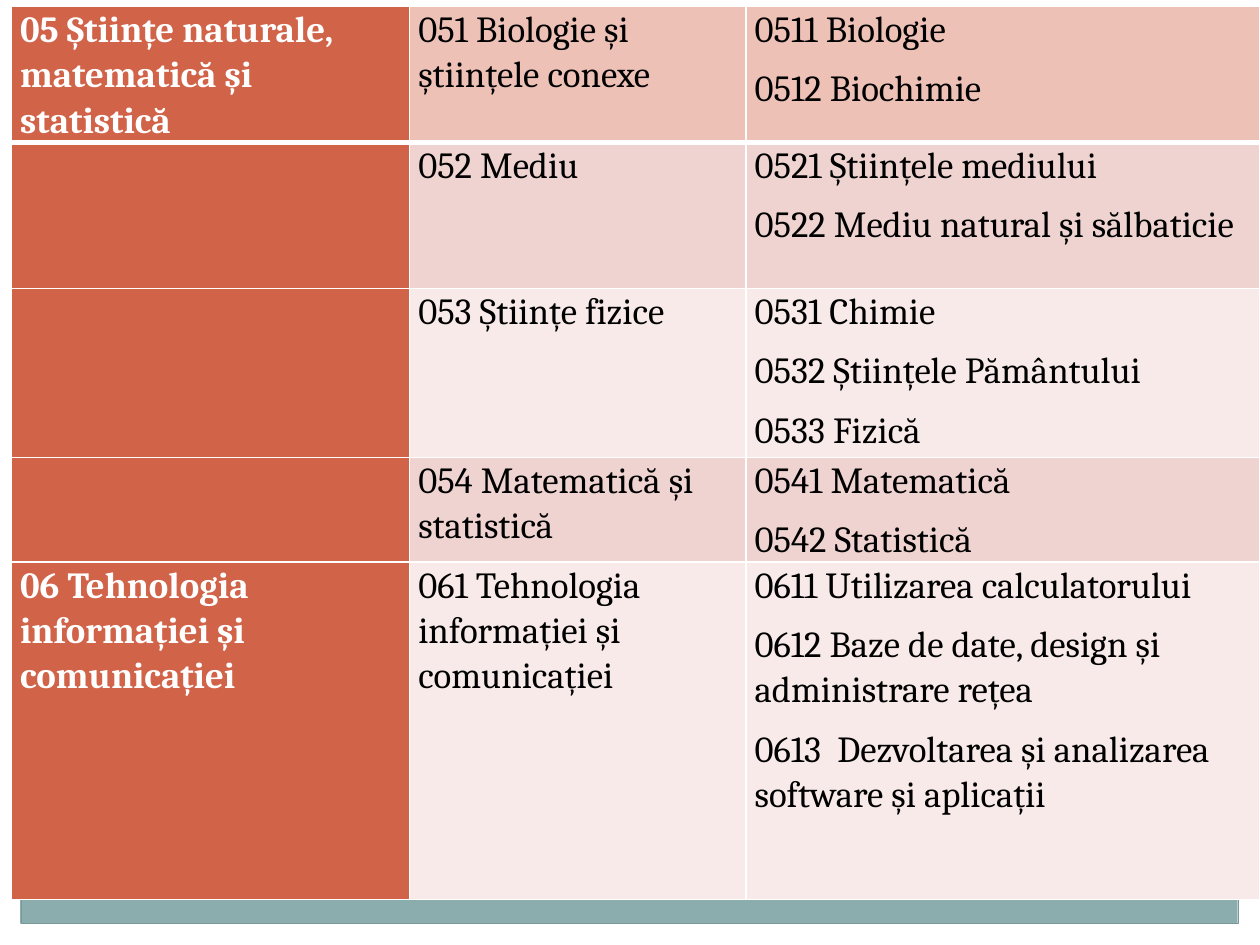
from lxml.etree import SubElement
from pptx import Presentation
from pptx.dml.color import RGBColor
from pptx.enum.shapes import MSO_SHAPE
from pptx.oxml.ns import qn
from pptx.util import Inches, Pt

HUES = {
    "back": "C5D1D7", "white": "FFFFFF", "black": "000000",
    "bar": "8CADAE", "frame": "7C999A", "field": "D16349",
    "head": "EDC1B6", "dark": "EED3D0", "light": "F7EAE9",
}


def hue(name):
    return RGBColor.from_string(HUES[name])


def edge(cell, side, width):
    """Draw one white border of a cell, with its width in points."""
    line = SubElement(cell._tc.get_or_add_tcPr(), qn("a:ln" + side), w=str(Pt(width)))
    fill = SubElement(line, qn("a:solidFill"))
    SubElement(fill, qn("a:srgbClr"), val=HUES["white"])


deck = Presentation()
deck.slide_width, deck.slide_height = Inches(10), Inches(7.5)
slide = deck.slides.add_slide(deck.slide_layouts[6])
slide.background.fill.solid()
slide.background.fill.fore_color.rgb = hue("back")

# White margins, bottom bar and thin frame
panels = [
    (0, 7.33, 10, 0.17, "white", None),
    (0, 0, 10, 1.52, "white", None),
    (0, 0, 0.17, 7.5, "white", None),
    (9.83, 0, 0.17, 7.5, "white", None),
    (0.16, 6.99, 9.66, 0.34, "bar", None),
    (0.17, 0.17, 9.66, 7.16, None, "frame"),
]
for *box, fill, line in panels:
    panel = slide.shapes.add_shape(MSO_SHAPE.RECTANGLE, *map(Inches, box))
    panel.shadow.inherit = False
    if fill:
        panel.fill.solid()
        panel.fill.fore_color.rgb = hue(fill)
    else:
        panel.fill.background()
    if line:
        panel.line.color.rgb = hue(line)
        panel.line.width = Pt(0.75)
    else:
        panel.line.fill.background()

# Table: broad field, narrow field, detailed fields
widths = [3.16, 2.67, 4.08]
rows = [
    (1.02, "head", "05 Științe naturale, matematică și statistică",
     "051 Biologie și științele conexe",
     ["0511 Biologie", "0512 Biochimie"]),
    (1.16, "dark", "", "052 Mediu",
     ["0521 Științele mediului", "0522 Mediu natural și sălbaticie"]),
    (1.34, "light", "", "053 Științe fizice",
     ["0531 Chimie", "0532 Științele Pământului", "0533 Fizică"]),
    (0.83, "dark", "", "054 Matematică și statistică",
     ["0541 Matematică", "0542 Statistică"]),
    (2.68, "light", "06 Tehnologia informației și comunicației",
     "061 Tehnologia informației și comunicației",
     ["0611 Utilizarea calculatorului",
      "0612 Baze de date, design și administrare rețea",
      "0613  Dezvoltarea și analizarea software și aplicații"]),
]
table = slide.shapes.add_table(
    len(rows), len(widths), Inches(0.09), Inches(0.05),
    Inches(sum(widths)), Inches(sum(row[0] for row in rows))).table
table.first_row = table.horz_banding = False
for col, width in zip(table.columns, widths):
    col.width = Inches(width)

for r, (height, tint, broad, narrow, details) in enumerate(rows):
    table.rows[r].height = Inches(height)
    for c, text in enumerate([broad, narrow, "\n".join(details)]):
        cell = table.cell(r, c)
        cell.margin_left = cell.margin_right = Inches(0.07)
        cell.margin_top = cell.margin_bottom = 0

        # Borders, thick below the first row
        edge(cell, "L", 1)
        edge(cell, "R", 1)
        edge(cell, "T", 3 if r == 1 else 1)
        edge(cell, "B", 3 if r == 0 else 1)
        cell.fill.solid()
        cell.fill.fore_color.rgb = hue(tint if c else "field")

        # Text
        cell.text_frame.text = text
        for para in cell.text_frame.paragraphs:
            para.line_spacing = 1.07
            para.space_after = Pt(8)
            for run in para.runs:
                run.font.name = "Cambria"
                run.font.size = Pt(21)
                run.font.bold = c == 0
                run.font.color.rgb = hue("black" if c else "white")

deck.save("out.pptx")
